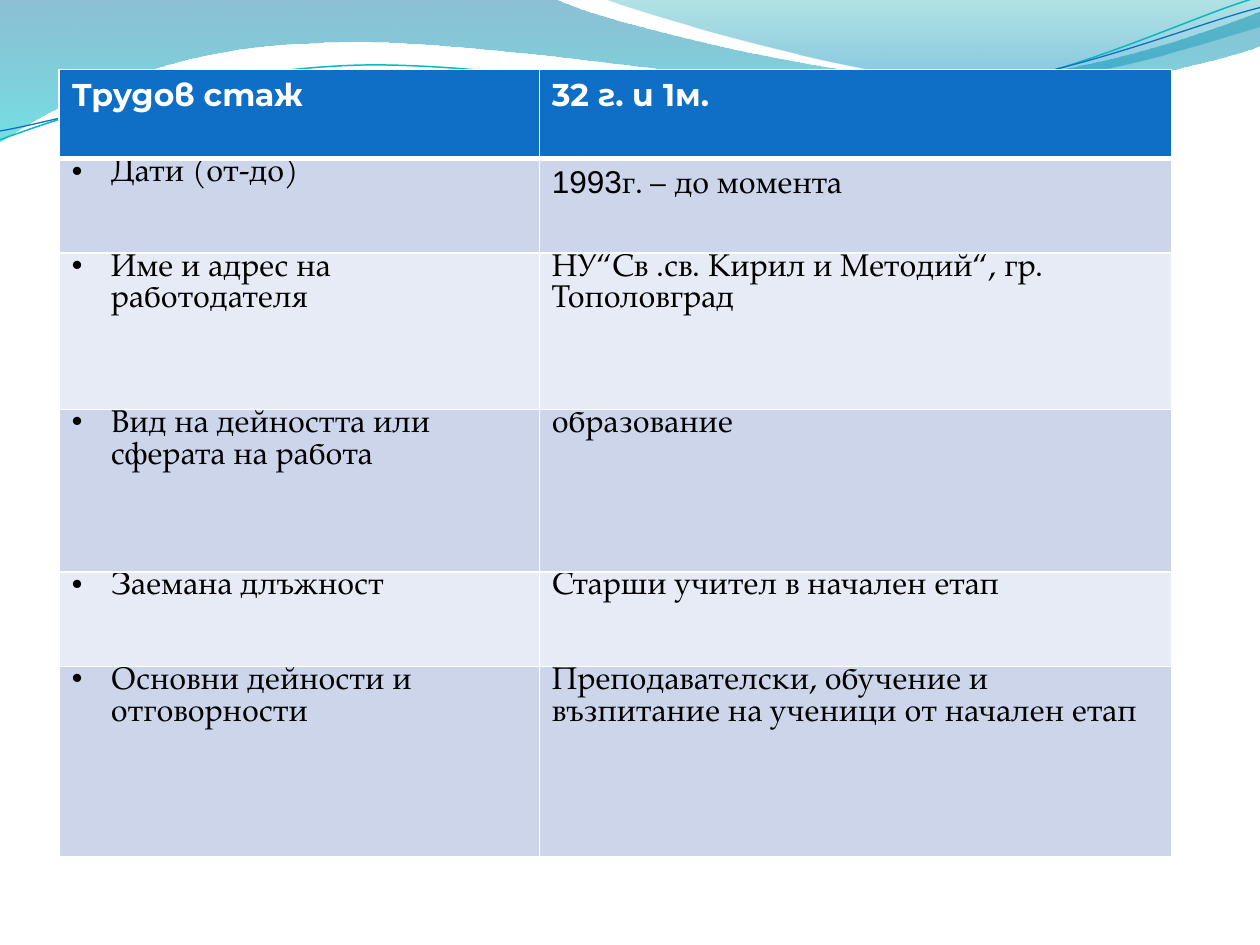
from lxml import etree
from pptx import Presentation, util as u
from pptx.dml.color import RGBColor
from pptx.enum import lang
from pptx.oxml import ns

PX = 9144  # one px is a hundredth of an inch
COLORS = {
    "white": "FFFFFF", "black": "000000", "blue": "0F6FC6", "teal": "0AB8BF",
    "band": "CCD5EA", "pale": "E7EBF5",
    "wave_top": "0074A1", "wave_end": "00C6CF",
    "crest_top": "00A1A9", "crest_end": "008BBF",
}
HEAD, BODY, DIGITS = "Montserrat", "TeX Gyre Pagella", "Arial"


def px(n):
    return u.Emu(n * PX)


def rgb(name):
    return RGBColor.from_string(COLORS[name])


def add_xml(parent, tag, **attrs):
    return etree.SubElement(parent, ns.qn(tag), {k: str(v) for k, v in attrs.items()})


def add_text(p, text, font=BODY, size=18, color="black", bold=False):
    r = p.add_run()
    r.text = text
    r.font.name, r.font.size, r.font.bold = font, u.Pt(size), bold
    r.font.color.rgb = rgb(color)
    r.font.language_id = lang.MSO_LANGUAGE_ID.BULGARIAN


class Deck:
    def __init__(self, width, height):
        self.prs = Presentation()
        self.prs.slide_width, self.prs.slide_height = px(width), px(height)
        self.s = self.prs.slides.add_slide(self.prs.slide_layouts[6])

    def outline(self, start, segments, close):
        """Draw lines (2 numbers) and cubic curves (6 numbers) from a start point."""
        points = [seg[i:i + 2] for seg in segments for i in range(0, len(seg), 2)]
        builder = self.s.shapes.build_freeform(*start, scale=PX)
        builder.add_line_segments(points, close=close)
        sp = builder.convert_to_shape()
        sp.shadow.inherit = False
        # Join the three line steps of each cubic into one curve
        lines = iter(list(sp._element.iter(ns.qn("a:lnTo"))))
        for seg in segments:
            steps = [next(lines) for _ in range(len(seg) // 2)]
            if len(steps) == 3:
                cubic = etree.Element(ns.qn("a:cubicBezTo"))
                steps[0].addprevious(cubic)
                for step in steps:
                    cubic.append(step[0])
                    step.getparent().remove(step)
        return sp

    def wave(self, start, segments, stops):
        sp = self.outline(start, segments, close=True)
        sp.line.fill.background()
        sp.fill.gradient()
        grad = sp._element.spPr.find(ns.qn("a:gradFill"))
        for child in list(grad):
            grad.remove(child)
        stop_list = add_xml(grad, "a:gsLst")
        for pos, color, opacity in stops:
            stop = add_xml(stop_list, "a:gs", pos=pos * 1000)
            clr = add_xml(stop, "a:srgbClr", val=COLORS[color])
            add_xml(clr, "a:alpha", val=opacity * 1000)
        add_xml(grad, "a:lin", ang=5400000, scaled=0)

    def curve(self, start, segments, color, width):
        sp = self.outline(start, segments, close=False)
        sp.fill.background()
        sp.line.color.rgb = rgb(color)
        sp.line.width = u.Pt(width)

    def table(self, x, y, cols, rows):
        frame = self.s.shapes.add_table(len(rows), len(cols), px(x), px(y),
                                        px(sum(cols)), px(sum(rows)))
        tbl = frame.table
        for col, width in zip(tbl.columns, cols):
            col.width = px(width)
        for row, height in zip(tbl.rows, rows):
            row.height = px(height)
        return tbl

    def cell(self, cell, runs, fill, bullet=False, margin=0, top=1, bottom=1, **fmt):
        cell.margin_top = cell.margin_bottom = px(margin)
        p = cell.text_frame.paragraphs[0]
        if bullet:
            pPr = p._p.get_or_add_pPr()
            pPr.set("marL", str(px(31)))
            pPr.set("indent", str(px(-31)))
            add_xml(pPr, "a:buFont", typeface="Symbol")
            add_xml(pPr, "a:buChar", char="•")
        for text, font in runs:
            add_text(p, text, font, **fmt)
        tcPr = cell._tc.get_or_add_tcPr()
        for side, width in (("L", 1), ("R", 1), ("T", top), ("B", bottom)):
            border = add_xml(tcPr, f"a:ln{side}", w=u.Pt(width))
            add_xml(add_xml(border, "a:solidFill"), "a:srgbClr", val=COLORS["white"])
        cell.fill.solid()
        cell.fill.fore_color.rgb = rgb(fill)


def main():
    deck = Deck(1000, 750)

    # Waves along the top
    deck.wave((0, 0),
              [(440, -1), (476, 17, 664, 63, 758, 63), (853, 63, 958, 26, 1000, 9),
               (1001, 36), (983, 44, 870, 76, 746, 75), (622, 75, 382, 28, 257, 34),
               (129, 36, 46, 83, -1, 113)],
              [(0, "wave_top", 45), (100, "wave_end", 55)])
    deck.wave((479, -1),
              [(509, 11, 682, 62, 769, 65), (856, 69, 961, 32, 1000, 21), (1000, 0)],
              [(0, "crest_top", 30), (80, "crest_end", 45)])
    deck.curve((0, 111),
               [(48, 93, 158, 57, 277, 52), (395, 47, 593, 89, 713, 80),
                (833, 71, 938, 15, 998, -2)], "teal", 0.85)
    deck.curve((0, 104),
               [(47, 96, 164, 61, 283, 56), (403, 51, 597, 84, 717, 75),
                (836, 67, 941, 21, 1000, 6)], "blue", 0.75)

    # Work experience table
    tbl = deck.table(47, 55, [381, 502], [71, 75, 124, 129, 75, 151])
    for col, text in enumerate(["Трудов стаж", "32 г. и 1м."]):
        deck.cell(tbl.cell(0, col), [(text, HEAD)], "blue", margin=5, bottom=3,
                  color="white", bold=True)

    entries = [
        ("Дати (от-до)", [("1993", DIGITS), ("г. – до момента", BODY)]),
        ("Име и адрес на работодателя",
         [("НУ“Св .св. Кирил и Методий“, гр. Тополовград", BODY)]),
        ("Вид на дейността или сферата на работа", [("образование", BODY)]),
        ("Заемана длъжност", [("Старши учител в начален етап", BODY)]),
        ("Основни дейности и отговорности",
         [("Преподавателски, обучение и възпитание на ученици от начален етап", BODY)]),
    ]
    for row, (label, value) in enumerate(entries, start=1):
        fill = "band" if row % 2 else "pale"
        top = 3 if row == 1 else 1
        deck.cell(tbl.cell(row, 0), [(label, BODY)], fill, bullet=True, top=top)
        deck.cell(tbl.cell(row, 1), value, fill, margin=5 if row == 1 else 0, top=top)

    deck.prs.save("out.pptx")


if __name__ == "__main__":
    main()
